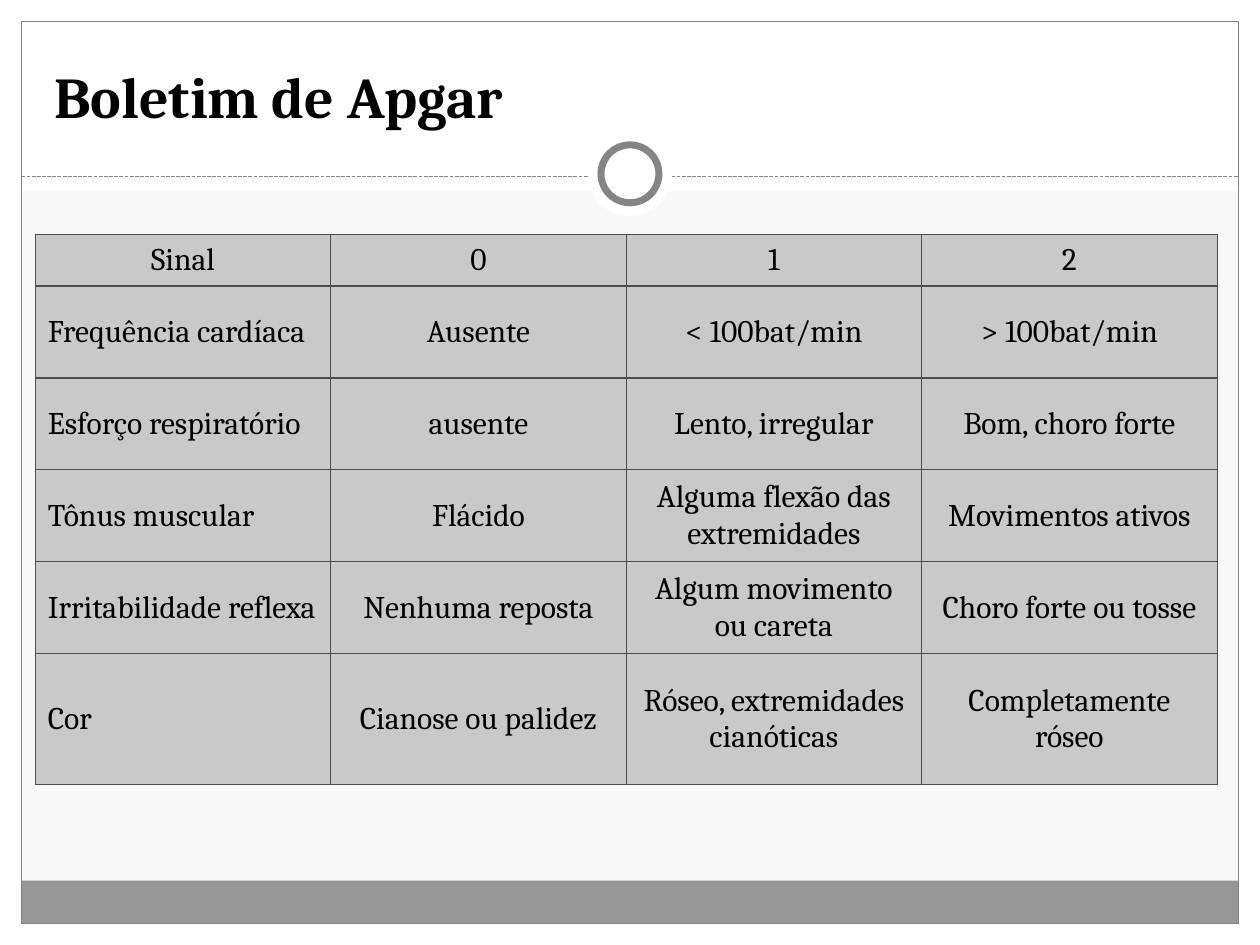
from dataclasses import dataclass

from lxml.etree import SubElement
from pptx import Presentation
from pptx.dml.color import RGBColor as Rgb
from pptx.enum.dml import MSO_LINE_DASH_STYLE as Dash
from pptx.enum.shapes import MSO_CONNECTOR as Connector, MSO_SHAPE as Shape
from pptx.enum.text import MSO_ANCHOR as Anchor, MSO_AUTO_SIZE as AutoSize, PP_ALIGN as Align
from pptx.oxml.ns import qn
from pptx.util import Inches, Pt


@dataclass(frozen=True)
class Theme:
    font: str = "Cambria"
    title_size: float = 33
    cell_size: float = 18
    rule_width: float = 0.75
    ring_width: float = 4
    text: str = "000000"
    paper: str = "F8F8F8"
    white: str = "FFFFFF"
    footer: str = "969696"
    frame: str = "848484"
    cell: str = "C9C9C9"
    border: str = "4D4D4D"


THEME = Theme()
WIDTH, HEIGHT = 10, 7.5
MARGIN = 0.17
HEADER_HEIGHT = 1.52
FOOTER_HEIGHT = 0.34
RULE_Y = 1.4
RING_Y = 1.38
TABLE_LEFT, TABLE_TOP, TABLE_WIDTH = 0.28, 1.86, 9.38
ROW_HEIGHTS = [0.41] + [0.73] * 4 + [1.04]

APGAR_ROWS = [
    ["Sinal", "0", "1", "2"],
    ["Frequência cardíaca", "Ausente", "< 100bat/min", "> 100bat/min"],
    ["Esforço respiratório", "ausente", "Lento, irregular", "Bom, choro forte"],
    ["Tônus muscular", "Flácido", "Alguma flexão das extremidades", "Movimentos ativos"],
    ["Irritabilidade reflexa", "Nenhuma reposta", "Algum movimento ou careta", "Choro forte ou tosse"],
    ["Cor", "Cianose ou palidez", "Róseo, extremidades cianóticas", "Completamente róseo"],
]


def add_panel(page, left, top, width, height, fill=None, line=None,
              line_width=THEME.rule_width, kind=Shape.RECTANGLE):
    panel = page.shapes.add_shape(kind, *map(Inches, (left, top, width, height)))
    panel.shadow.inherit = False
    if fill:
        panel.fill.solid()
        panel.fill.fore_color.rgb = Rgb.from_string(fill)
    else:
        panel.fill.background()
    if line:
        panel.line.color.rgb = Rgb.from_string(line)
        panel.line.width = Pt(line_width)
    else:
        panel.line.fill.background()


def add_disc(page, diameter, **style):
    """Add a circle centred on the ring's place in the header rule."""
    add_panel(page, (WIDTH - diameter) / 2, RING_Y - diameter / 2,
              diameter, diameter, THEME.white, kind=Shape.OVAL, **style)


def add_dashed_rule(page):
    rule = page.shapes.add_connector(
        Connector.STRAIGHT, Inches(MARGIN), Inches(RULE_Y),
        Inches(WIDTH - MARGIN), Inches(RULE_Y))
    rule.line.color.rgb = Rgb.from_string(THEME.frame)
    rule.line.width = Pt(THEME.rule_width)
    rule.line.dash_style = Dash.SQUARE_DOT
    SubElement(rule._element.spPr, qn("a:effectLst"))


def add_backdrop(page):
    page.background.fill.solid()
    page.background.fill.fore_color.rgb = Rgb.from_string(THEME.paper)
    inner_width, inner_height = WIDTH - 2 * MARGIN, HEIGHT - 2 * MARGIN
    bottom = HEIGHT - MARGIN
    for area in [(0, bottom, WIDTH, MARGIN), (0, 0, WIDTH, HEADER_HEIGHT),
                 (0, 0, MARGIN, HEIGHT), (WIDTH - MARGIN, 0, MARGIN, HEIGHT)]:
        add_panel(page, *area, fill=THEME.white)
    add_panel(page, MARGIN, bottom - FOOTER_HEIGHT, inner_width, FOOTER_HEIGHT, THEME.footer)
    add_panel(page, MARGIN, MARGIN, inner_width, inner_height, line=THEME.frame)
    add_dashed_rule(page)
    add_disc(page, 0.67)
    add_disc(page, 0.46, line=THEME.frame, line_width=THEME.ring_width)


def write(para, text, size, align, bold=False):
    para.alignment = align
    span = para.add_run()
    span.text = text
    span.font.name = THEME.font
    span.font.size = Pt(size)
    span.font.bold = bold
    span.font.color.rgb = Rgb.from_string(THEME.text)


def set_title(page, text):
    title = page.shapes.title
    title.left, title.top, title.width, title.height = map(Inches, (0.33, 0.25, 9.33, 0.83))
    frame = title.text_frame
    frame.auto_size = AutoSize.NONE
    frame.word_wrap = True
    frame.vertical_anchor = Anchor.BOTTOM
    write(frame.paragraphs[0], text, THEME.title_size, Align.LEFT, bold=True)
    page.shapes._spTree.append(title._element)  # bring in front of the backdrop


def set_borders(cell):
    """Outline a cell; borders must precede its fill in the XML."""
    properties = cell._tc.get_or_add_tcPr()
    for side in ("a:lnL", "a:lnR", "a:lnT", "a:lnB"):
        line = SubElement(properties, qn(side), w=str(Pt(THEME.rule_width)))
        fill = SubElement(line, qn("a:solidFill"))
        SubElement(fill, qn("a:srgbClr"), val=THEME.border)


def add_table(page, rows):
    column_count = len(rows[0])
    table = page.shapes.add_table(
        len(rows), column_count, Inches(TABLE_LEFT), Inches(TABLE_TOP),
        Inches(TABLE_WIDTH), Inches(sum(ROW_HEIGHTS))).table
    table.first_row = table.horz_banding = False
    for column in table.columns:
        column.width = Inches(TABLE_WIDTH / column_count)
    for r, (texts, height) in enumerate(zip(rows, ROW_HEIGHTS)):
        table.rows[r].height = Inches(height)
        for c, text in enumerate(texts):
            cell = table.cell(r, c)
            set_borders(cell)
            cell.fill.solid()
            cell.fill.fore_color.rgb = Rgb.from_string(THEME.cell)
            cell.vertical_anchor = Anchor.MIDDLE
            align = Align.LEFT if r and not c else Align.CENTER
            write(cell.text_frame.paragraphs[0], text, THEME.cell_size, align)


def main():
    deck = Presentation()
    deck.slide_width, deck.slide_height = Inches(WIDTH), Inches(HEIGHT)
    page = deck.slides.add_slide(deck.slide_layouts.get_by_name("Title Only"))
    add_backdrop(page)
    set_title(page, "Boletim de Apgar")
    add_table(page, APGAR_ROWS)
    deck.save("out.pptx")


if __name__ == "__main__":
    main()
